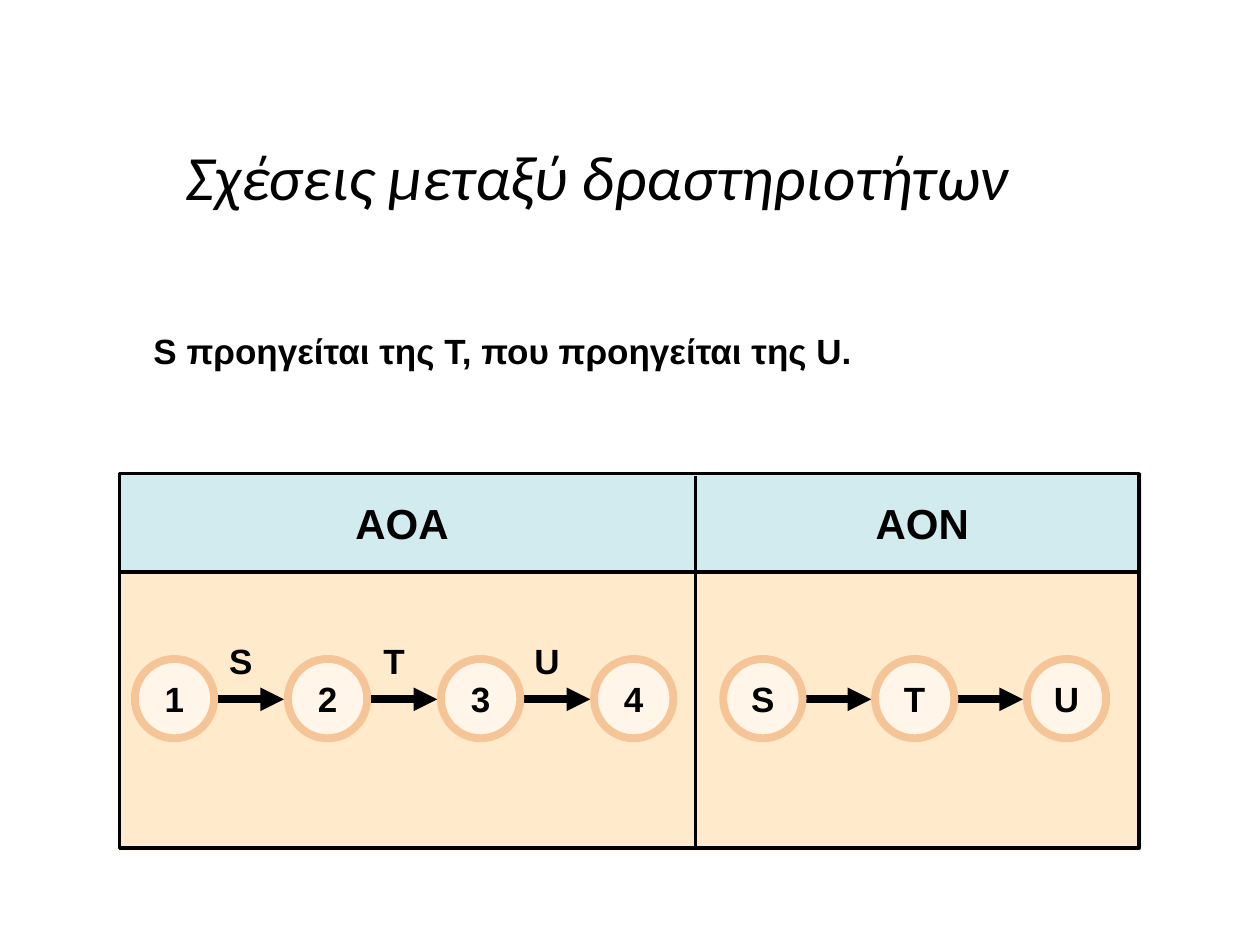
from dataclasses import dataclass

from lxml import etree
from pptx import Presentation
from pptx.dml.color import RGBColor
from pptx.enum.shapes import MSO_CONNECTOR, MSO_SHAPE
from pptx.enum.text import MSO_ANCHOR, PP_ALIGN
from pptx.oxml.ns import qn
from pptx.util import Inches, Pt

RECTANGLE, ELLIPSE = MSO_SHAPE.RECTANGLE, MSO_SHAPE.OVAL
STRAIGHT = MSO_CONNECTOR.STRAIGHT
MIDDLE, BOTTOM = MSO_ANCHOR.MIDDLE, MSO_ANCHOR.BOTTOM
LEFT, CENTER = PP_ALIGN.LEFT, PP_ALIGN.CENTER

CELL = Inches(0.1)  # the slide is a grid of 100 columns by 75 rows
COLUMNS, ROWS = 100, 75
BLACK, HEADER_BLUE, PANEL_CREAM = "000000", "D1EBEE", "FFEBCC"
NODE_FILL, NODE_RING = "FFF5E8", "F5C597"

# Diagram measures, in grid cells
PANEL_LEFT, PANEL_TOP = 9.4, 37.5
PANEL_WIDTH, PANEL_HEIGHT, HEADER_HEIGHT = 81.2, 30, 7.8
DIVIDER = 55.2
NODE_TOP, NODE_SIZE = 52.3, 6.3
ARROW_ROW, ARROW_OVERLAP = 55.5, 0.3
LABEL_ROW, LABEL_SIZE, LABEL_SHIFT = 52.4, 5.4, 0.5


@dataclass
class Network:
    heading: str
    heading_center: float
    left: float
    pitch: float
    nodes: str
    activities: str = ""


NETWORKS = [
    Network("AOA", 31.9, 10.7, 12.15, "1234", "STU"),
    Network("AON", 73.2, 57.4, 12.05, "STU"),
]


def cells(*counts: float) -> list[int]:
    return [round(count * CELL) for count in counts]


def color(code: str) -> RGBColor:
    return RGBColor.from_string(code)


def write(shape, text: str, size: float, align=CENTER, anchor=MIDDLE,
          margin: float = 0, wrap: bool = False) -> None:
    frame = shape.text_frame
    frame.word_wrap = wrap
    frame.vertical_anchor = anchor
    frame.margin_left = frame.margin_right = Inches(margin)
    frame.margin_top = frame.margin_bottom = Inches(margin / 2)
    para = frame.paragraphs[0]
    para.text, para.alignment = text, align
    para.font.name, para.font.size = "Arial", Pt(size)
    para.font.bold = True
    para.font.color.rgb = color(BLACK)


def add_text(page, text: str, center: float, middle: float,
             width: float, height: float, size: float) -> None:
    box = page.shapes.add_textbox(
        *cells(center - width / 2, middle - height / 2, width, height))
    write(box, text, size)


def add_box(page, kind, left: float, top: float, width: float, height: float,
            fill: str = "", line: str = "", weight: float = 2):
    shape = page.shapes.add_shape(kind, *cells(left, top, width, height))
    shape.shadow.inherit = False
    if fill:
        shape.fill.solid()
        shape.fill.fore_color.rgb = color(fill)
    else:
        shape.fill.background()
    if line:
        shape.line.color.rgb = color(line)
        shape.line.width = Pt(weight)
    else:
        shape.line.fill.background()
    return shape


def add_line(page, x1: float, y1: float, x2: float, y2: float,
             weight: float = 2, arrow: bool = False) -> None:
    line = page.shapes.add_connector(STRAIGHT, *cells(x1, y1, x2, y2))
    line.line.color.rgb = color(BLACK)
    line.line.width = Pt(weight)
    if arrow:
        etree.SubElement(line.line._get_or_add_ln(), qn("a:tailEnd"), type="triangle")
    etree.SubElement(line._element.spPr, qn("a:effectLst"))


def add_network(page, network: Network) -> None:
    add_text(page, network.heading, network.heading_center, 41.5, 9.8, 5.2, 24)
    lefts = [network.left + index * network.pitch
             for index in range(len(network.nodes))]
    # Arrows lie beneath the node rings
    for start, end in zip(lefts, lefts[1:]):
        add_line(page, start + NODE_SIZE - ARROW_OVERLAP, ARROW_ROW,
                 end - ARROW_OVERLAP, ARROW_ROW, 4.5, True)
    for left, name in zip(lefts, network.nodes):
        node = add_box(page, ELLIPSE, left, NODE_TOP, NODE_SIZE, NODE_SIZE,
                       NODE_FILL, NODE_RING, 4.5)
        write(node, name, 20)
    for left, name in zip(lefts, network.activities):
        middle = left + (NODE_SIZE + network.pitch) / 2 - ARROW_OVERLAP
        add_text(page, name, middle - LABEL_SHIFT, LABEL_ROW,
                 LABEL_SIZE, LABEL_SIZE, 20)


def main() -> None:
    deck = Presentation()
    deck.slide_width, deck.slide_height = cells(COLUMNS, ROWS)
    page = deck.slides.add_slide(deck.slide_layouts[5])

    # Title
    title = page.shapes.title
    title.left, title.top, title.width, title.height = cells(2.4, 7.7, 90, 12.5)
    title.text_frame.vertical_anchor = MIDDLE
    para = title.text_frame.paragraphs[0]
    para.text, para.alignment = "Σχέσεις μεταξύ δραστηριοτήτων", CENTER
    para.font.name, para.font.size = "Calibri", Pt(36)
    para.font.italic = True
    para.font.color.rgb = color(BLACK)

    # Statement of the precedence rule
    statement = page.shapes.add_textbox(*cells(11.2, 17.7, 77.6, 12.3))
    write(statement, "S προηγείται της T, που προηγείται της U.", 20,
          LEFT, BOTTOM, 0.1, True)

    # Panel with header band, rules and border
    right, bottom = PANEL_LEFT + PANEL_WIDTH, PANEL_TOP + PANEL_HEIGHT
    header_bottom = PANEL_TOP + HEADER_HEIGHT
    add_box(page, RECTANGLE, PANEL_LEFT, PANEL_TOP, PANEL_WIDTH, PANEL_HEIGHT,
            PANEL_CREAM)
    add_box(page, RECTANGLE, PANEL_LEFT, PANEL_TOP, PANEL_WIDTH, HEADER_HEIGHT,
            HEADER_BLUE)
    add_line(page, PANEL_LEFT + 0.2, header_bottom + 0.1, right - 0.3,
             header_bottom + 0.1)
    add_line(page, DIVIDER, PANEL_TOP + 0.3, DIVIDER, bottom - 0.3)
    add_box(page, RECTANGLE, PANEL_LEFT + 0.1, PANEL_TOP + 0.1,
            PANEL_WIDTH - 0.3, PANEL_HEIGHT - 0.3, line=BLACK)

    # The two network notations
    for network in NETWORKS:
        add_network(page, network)

    deck.save("out.pptx")


if __name__ == "__main__":
    main()
